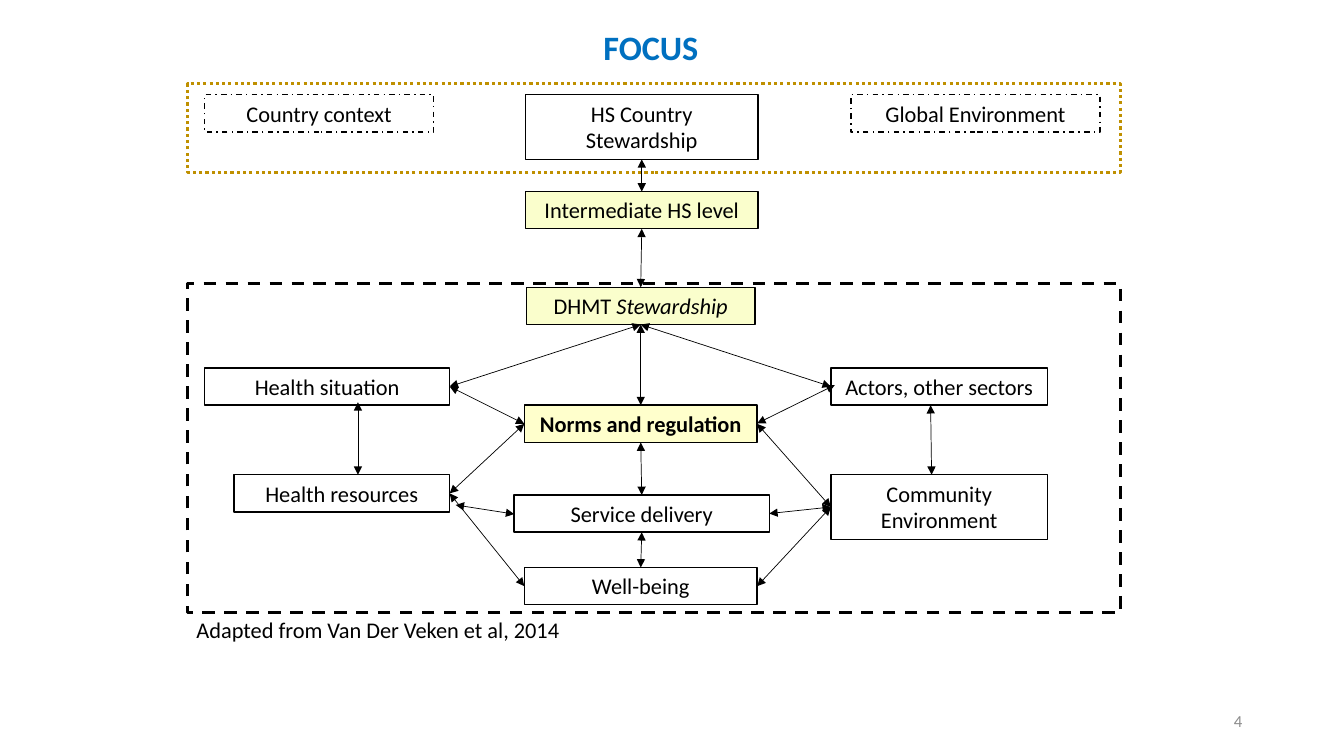
import pptx
import pptx.dml.color
import pptx.enum.dml
import pptx.enum.shapes
import pptx.enum.text
import pptx.oxml
import pptx.oxml.ns
import pptx.util

Inches = pptx.util.Inches
Pt = pptx.util.Pt
Align = pptx.enum.text.PP_ALIGN
Anchor = pptx.enum.text.MSO_ANCHOR
Dash = pptx.enum.dml.MSO_LINE

TOP, LEFT, BOTTOM, RIGHT = range(4)
ROW = 0.37
TALL_ROW = 0.64
WHITE, BLACK, CREAM, YELLOW = "FFFFFF", "000000", "FAFECC", "FFFFCC"


def color(value):
    return pptx.dml.color.RGBColor.from_string(value)


def element(tag, attributes=""):
    """Make an empty drawing element."""
    return pptx.oxml.parse_xml(f"<{tag} {pptx.oxml.ns.nsdecls('a')} {attributes}/>")


class Diagram:
    """Holds the style and the page that the elements are drawn on."""

    font = "Calibri"
    size = 16

    def __init__(self, page):
        self.page = page

    def add_text(self, shape, spans, tint=BLACK, size=size, align=Align.CENTER,
                 anchor=Anchor.TOP, spacing=None):
        """Fill a shape with one paragraph of (text, font values) spans."""
        frame = shape.text_frame
        frame.word_wrap = True
        frame.vertical_anchor = anchor
        para = frame.paragraphs[0]
        para.alignment = align
        para.line_spacing = spacing
        for text, values in spans:
            span = para.add_run()
            span.text = text
            span.font.color.rgb = color(tint)
            for name, value in {"name": self.font, "size": Pt(size), **values}.items():
                setattr(span.font, name, value)

    def label(self, place, text, bold=None, **style):
        box = self.page.shapes.add_textbox(*map(Inches, place))
        self.add_text(box, [(text, {"bold": bold})], **style)

    def box(self, place, spans=(), fill=WHITE, line=BLACK, width=1, dash=None):
        shape = self.page.shapes.add_shape(
            pptx.enum.shapes.MSO_SHAPE.RECTANGLE, *map(Inches, place))
        shape.shadow.inherit = False
        shape.fill.solid()
        shape.fill.fore_color.rgb = color(fill)
        shape.line.color.rgb = color(line)
        shape.line.width = Pt(width)
        shape.line.dash_style = dash
        if spans:
            self.add_text(shape, spans)
        return shape

    def arrow(self, start=(0, 0), end=(0, 0)):
        """Draw a thin line with a triangle at both ends."""
        line = self.page.shapes.add_connector(
            pptx.enum.shapes.MSO_CONNECTOR.STRAIGHT, *map(Inches, (*start, *end)))
        line.line.color.rgb = color(BLACK)
        line.line.width = Pt(0.5)
        properties = line._element.spPr
        outline = properties.find(pptx.oxml.ns.qn("a:ln"))
        for tag in ("a:headEnd", "a:tailEnd"):
            outline.append(element(tag, "type='triangle'"))
        properties.append(element("a:effectLst"))
        return line

    def link(self, first, first_side, second, second_side):
        """Join two boxes by an arrow glued to their sides."""
        line = self.arrow()
        line.begin_connect(first, first_side)
        line.end_connect(second, second_side)


def main():
    deck = pptx.Presentation()
    deck.slide_width = Inches(13.33)
    deck.slide_height = Inches(7.5)
    diagram = Diagram(deck.slides.add_slide(deck.slide_layouts[6]))

    diagram.label((4.3, 0.23, 4.31, 0.53), "FOCUS", bold=True, tint="0070C0",
                  size=24.4, anchor=Anchor.MIDDLE, spacing=0.9)
    diagram.label((1.85, 6.06, 4.52, ROW), "Adapted from Van Der Veken et al, 2014",
                  align=Align.LEFT)
    diagram.label((9.42, 6.95, 3, 0.4), "4", tint="8C8C8C", size=12,
                  align=Align.RIGHT, anchor=Anchor.MIDDLE)

    diagram.box((1.86, 0.83, 9.25, 0.88), line="BF9000", width=2.25, dash=Dash.ROUND_DOT)
    diagram.box((1.86, 2.81, 9.25, 3.27), width=2.25, dash=Dash.DASH)

    for place, text in (
        ((2.03, 0.94, 2.27, ROW), "Country context"),
        ((8.44, 0.94, 2.47, ROW), "Global Environment"),
    ):
        diagram.box(place, [(text, {})], dash=Dash.DASH_DOT)

    spine = [
        diagram.box(place, spans, fill) for place, spans, fill in (
            ((5.21, 0.94, 2.31, TALL_ROW), [("HS Country Stewardship", {})], WHITE),
            ((5.21, 1.9, 2.31, ROW), [("Intermediate HS level", {})], CREAM),
            ((5.22, 2.85, 2.27, ROW),
             [("DHMT ", {}), ("Stewardship", {"italic": True})], CREAM),
            ((5.2, 4.02, 2.31, ROW), [("Norms and regulation", {"bold": True})], YELLOW),
            ((5.1, 4.91, 2.53, ROW), [("Service delivery", {})], WHITE),
            ((5.2, 5.63, 2.31, ROW), [("Well-being", {})], WHITE),
        )]
    district, norms, delivery, wellbeing = spine[2:]
    situation, resources, actors, community = [
        diagram.box(place, [(text, {})]) for place, text in (
            ((2.03, 3.65, 2.43, ROW), "Health situation"),
            ((2.32, 4.71, 2.14, ROW), "Health resources"),
            ((8.24, 3.65, 2.15, ROW), "Actors, other sectors"),
            ((8.24, 4.71, 2.15, TALL_ROW), "Community Environment"),
        )]

    for upper, lower in zip(spine, spine[1:]):
        diagram.link(upper, BOTTOM, lower, TOP)
    for ends in (
        (district, BOTTOM, situation, RIGHT),
        (district, BOTTOM, actors, LEFT),
        (norms, LEFT, situation, RIGHT),
        (norms, LEFT, resources, RIGHT),
        (resources, RIGHT, wellbeing, LEFT),
        (community, LEFT, norms, RIGHT),
        (community, LEFT, delivery, RIGHT),
        (community, LEFT, wellbeing, RIGHT),
    ):
        diagram.link(*ends)
    for start, end in (
        ((3.55, 3.99), (3.55, 4.71)),
        ((9.23, 4.02), (9.24, 4.71)),
        ((4.52, 5.01), (5.1, 5.1)),
        ((8.28, 3.82), (7.51, 4.2)),
    ):
        diagram.arrow(start, end)

    deck.save("out.pptx")


if __name__ == "__main__":
    main()
